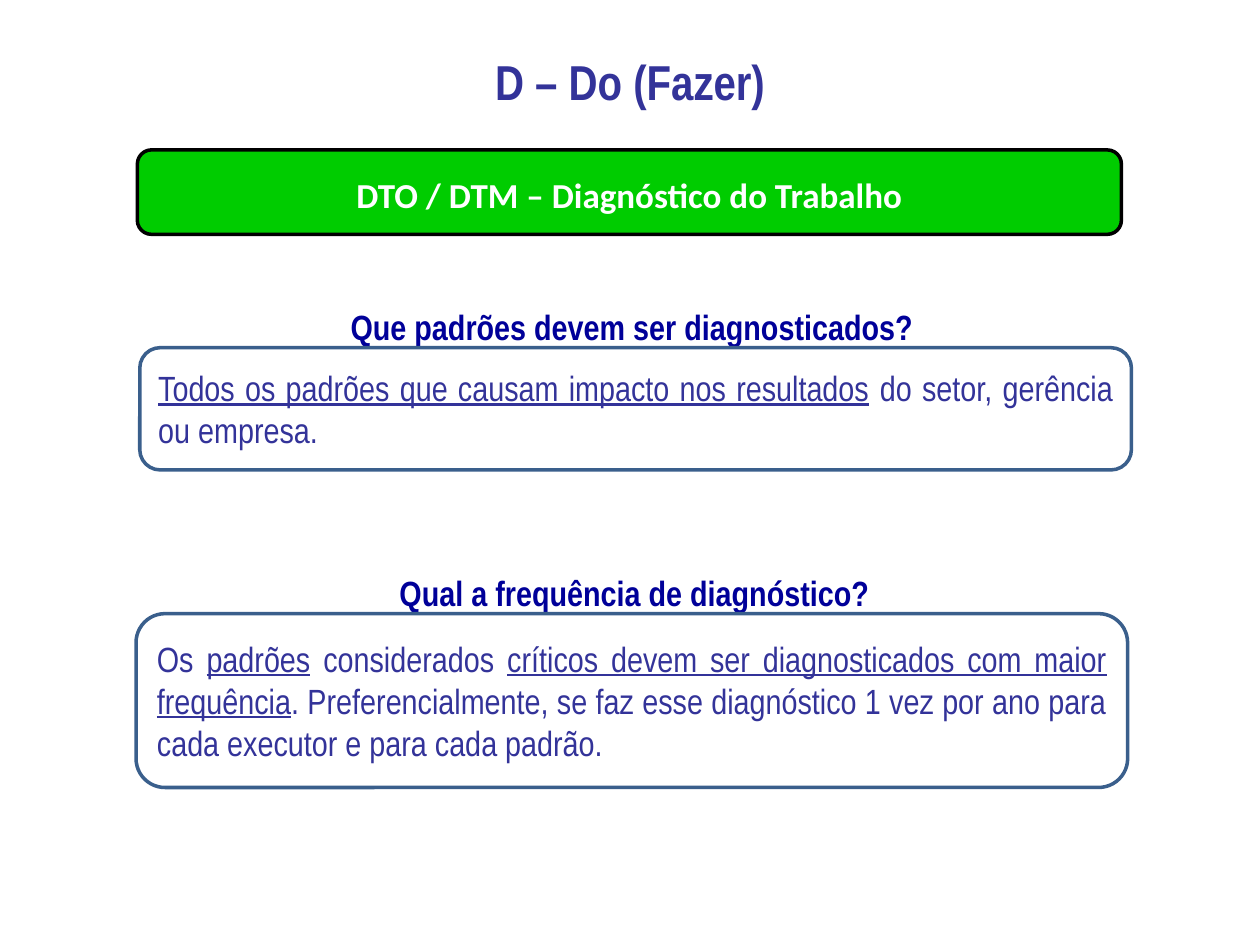
from pptx import Presentation
from pptx import util as u
from pptx.dml.color import RGBColor
from pptx.enum import shapes, text

WIDTH, HEIGHT = 10, 7.5
NARROW = "Arial Narrow"
COLORS = {
    "title": "333399",
    "heading": "000099",
    "body": "333399",
    "outline": "3A5F8C",
    "banner": "00CC00",
    "banner_line": "000000",
    "banner_text": "FFFFFF",
}
HEADING_HEIGHT = 0.52

QUESTIONS = [
    {
        "box": (1.11, 2.76, 7.87, 0.97),
        "heading_left": 1.11,
        "heading": "Que padrões devem ser diagnosticados?",
        "answer": [
            ("Todos os padrões que causam impacto nos resultados", True),
            (" do setor, gerência ou empresa.", False),
        ],
    },
    {
        "box": (1.08, 4.87, 7.87, 1.38),
        "heading_left": 1.13,
        "heading": "Qual a frequência de diagnóstico?",
        "answer": [
            ("Os ", False),
            ("padrões", True),
            (" considerados ", False),
            ("críticos devem ser diagnosticados com maior frequência", True),
            (". Preferencialmente, se faz esse diagnóstico 1 vez por ano "
             "para cada executor e para cada padrão.", False),
        ],
    },
]


def rgb(name):
    return RGBColor.from_string(COLORS[name])


def inches(box):
    return [u.Inches(length) for length in box]


def style_font(font, name, size, color, bold=False):
    font.name = name
    font.size = u.Pt(size)
    font.bold = bold
    font.color.rgb = rgb(color)


def write_line(shape, words, font_name, size, color, spacing):
    frame = shape.text_frame
    frame.word_wrap = True
    frame.text = words
    paragraph = frame.paragraphs[0]
    paragraph.alignment = text.PP_ALIGN.CENTER
    paragraph.line_spacing = spacing
    style_font(paragraph.runs[0].font, font_name, size, color, bold=True)


def add_rounded_box(slide, box, line, fill=None):
    shape = slide.shapes.add_shape(
        shapes.MSO_SHAPE.ROUNDED_RECTANGLE, *inches(box))
    shape.shadow.inherit = False
    if fill:
        shape.fill.solid()
        shape.fill.fore_color.rgb = rgb(fill)
    else:
        shape.fill.background()
    shape.line.color.rgb = rgb(line)
    shape.line.width = u.Pt(2)
    shape.text_frame.word_wrap = True
    shape.text_frame.vertical_anchor = text.MSO_ANCHOR.MIDDLE
    return shape


def add_title(slide, box):
    title = slide.shapes.add_textbox(*inches(box))
    title.text_frame.vertical_anchor = text.MSO_ANCHOR.MIDDLE
    write_line(title, "D – Do (Fazer)", NARROW, 28, "title", 1.1)


def add_banner(slide, box):
    banner = add_rounded_box(slide, box, "banner_line", "banner")
    write_line(banner, "DTO / DTM – Diagnóstico do Trabalho",
               "Calibri", 20, "banner_text", 1.1)


def add_question(slide, box, heading_left, heading, answer):
    top = box[1]
    caption = slide.shapes.add_textbox(*inches(
        (heading_left, top - HEADING_HEIGHT, 7.81, HEADING_HEIGHT)))
    write_line(caption, heading, NARROW, 20, "heading", 1.4)

    panel = add_rounded_box(slide, box, "outline")
    paragraph = panel.text_frame.paragraphs[0]
    paragraph.alignment = text.PP_ALIGN.JUSTIFY
    for words, underlined in answer:
        run = paragraph.add_run()
        run.text = words
        style_font(run.font, NARROW, 20, "body")
        run.font.underline = underlined


def main():
    presentation = Presentation()
    presentation.slide_width = u.Inches(WIDTH)
    presentation.slide_height = u.Inches(HEIGHT)
    slide = presentation.slides.add_slide(presentation.slide_layouts[6])
    for question in QUESTIONS:
        add_question(slide, **question)
    add_title(slide, (0, 0.31, WIDTH, 0.61))
    add_banner(slide, (1.09, 1.19, 7.81, 0.67))
    presentation.save("out.pptx")


if __name__ == "__main__":
    main()
